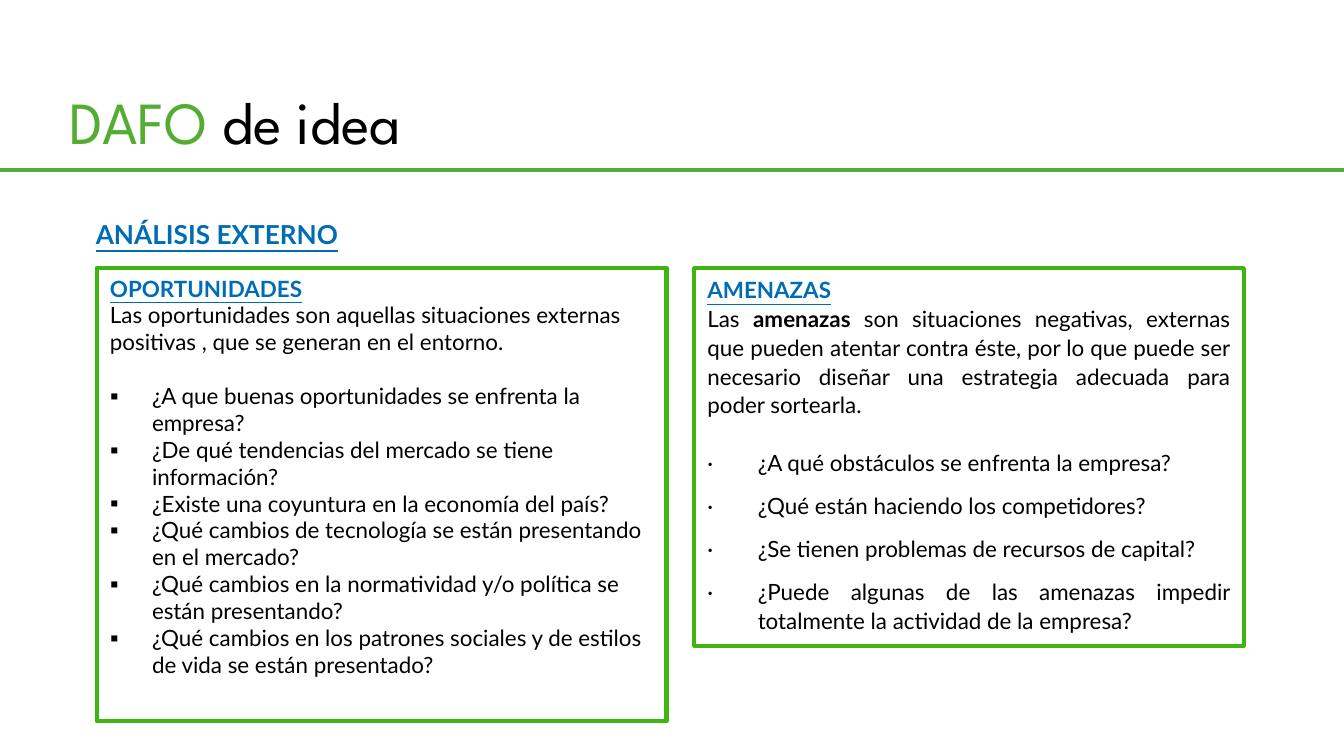
from lxml import etree
from pptx import Presentation
from pptx import util as u
from pptx.dml.color import RGBColor
from pptx.enum import shapes, text
from pptx.oxml import ns

GREEN, BORDER, BLUE, BLACK = "53AD32", "3FB512", "006CB5", "000000"
HEADING = {"name": "Lato", "size": u.Pt(12), "bold": True, "underline": True}
BODY = {"name": "Lato", "size": u.Pt(12)}
STRONG = BODY | {"bold": True}
LINE_HEIGHT = 14.4  # one 12 pt line, in points


def rgb(code):
    return RGBColor.from_string(code)


def write(paragraph, *runs):
    for words, color, style in runs:
        run = paragraph.add_run()
        run.text = words
        run.font.color.rgb = rgb(color)
        for key, value in style.items():
            setattr(run.font, key, value)


deck = Presentation()
deck.slide_width = u.Inches(10)
deck.slide_height = deck.slide_width * 9 // 16
slide = deck.slides.add_slide(deck.slide_layouts[6])
cell = deck.slide_width // 100  # square grid, 100 columns wide

# Title and section heading
title_style = {"name": "League Spartan", "size": u.Pt(32)}
labels = [
    ((4.2, 4.45, 48.6, 9.1), text.MSO_ANCHOR.MIDDLE,
     [("DAFO ", GREEN, title_style), ("de idea", BLACK, title_style)]),
    ((6.15, 15.75, 35.7, 3.4), text.MSO_ANCHOR.TOP,
     [("ANÁLISIS EXTERNO", BLUE, HEADING | {"size": u.Pt(14)})]),
]
for place, anchor, runs in labels:
    label = slide.shapes.add_textbox(*(round(n * cell) for n in place)).text_frame
    label.word_wrap, label.vertical_anchor = True, anchor
    write(label.paragraphs[0], *runs)

# Rule under the title, edge to edge
rule_y = round(12.65 * cell)
rule = slide.shapes.add_connector(
    shapes.MSO_CONNECTOR.STRAIGHT, 0, rule_y, deck.slide_width, rule_y)
rule.line.color.rgb, rule.line.width = rgb(GREEN), u.Pt(2)
etree.SubElement(rule.element.spPr, ns.qn("a:effectLst"))

# Opportunities and threats
panels = [
    {
        "place": (7.2, 19.95, 42.4, 33.7), "bullet": "▪", "indent": 3.13, "gap": 0,
        "layout": {"alignment": text.PP_ALIGN.LEFT, "line_spacing": 1.0},
        "heading": "OPORTUNIDADES",
        "intro": [("Las oportunidades son aquellas situaciones externas "
                   "positivas , que se generan en el entorno.", BLACK, BODY)],
        "questions": [
            "¿A que buenas oportunidades se enfrenta la empresa?",
            "¿De qué tendencias del mercado se tiene información?",
            "¿Existe una coyuntura en la economía del país?",
            "¿Qué cambios de tecnología se están presentando en el mercado?",
            "¿Qué cambios en la normatividad y/o política se están presentando?",
            "¿Qué cambios en los patrones sociales y de estilos de vida "
            "se están presentado?",
        ],
    },
    {
        "place": (51.65, 19.95, 40.9, 28.1), "bullet": "∙", "indent": 3.75, "gap": 7.7,
        "layout": {"alignment": text.PP_ALIGN.JUSTIFY, "line_spacing": 1.07},
        "heading": "AMENAZAS",
        "intro": [("Las ", BLACK, BODY), ("amenazas ", BLACK, STRONG),
                  ("son situaciones negativas, externas que pueden atentar contra "
                   "éste, por lo que puede ser necesario diseñar una estrategia "
                   "adecuada para poder sortearla. ", BLACK, BODY)],
        "questions": [
            "¿A qué obstáculos se enfrenta la empresa? ",
            "¿Qué están haciendo los competidores? ",
            "¿Se tienen problemas de recursos de capital? ",
            "¿Puede algunas de las amenazas impedir totalmente la actividad "
            "de la empresa? ",
        ],
    },
]
for panel in panels:
    box = slide.shapes.add_shape(
        shapes.MSO_SHAPE.RECTANGLE, *(round(n * cell) for n in panel["place"]))
    box.shadow.inherit = False
    box.fill.background()
    box.line.color.rgb, box.line.width = rgb(BORDER), u.Pt(2.25)
    frame = box.text_frame
    frame.word_wrap, frame.vertical_anchor = True, text.MSO_ANCHOR.TOP

    write(frame.paragraphs[0], (panel["heading"], BLUE, HEADING))
    write(frame.add_paragraph(), *panel["intro"])

    # Questions, set one line below the intro
    for order, words in enumerate(panel["questions"]):
        question = frame.add_paragraph()
        props = question._p.get_or_add_pPr()
        indent = round(panel["indent"] * cell)
        props.set("marL", str(indent))
        props.set("indent", str(-indent))
        bullet_color = etree.SubElement(props, ns.qn("a:buClr"))
        etree.SubElement(bullet_color, ns.qn("a:srgbClr"), val=BLACK)
        etree.SubElement(props, ns.qn("a:buFont"), typeface="Lato")
        etree.SubElement(props, ns.qn("a:buChar"), char=panel["bullet"])
        blank_line = LINE_HEIGHT * panel["layout"]["line_spacing"]
        question.space_before = u.Pt(panel["gap"] if order else blank_line)
        write(question, (words, BLACK, BODY))

    for paragraph in frame.paragraphs:
        for key, value in panel["layout"].items():
            setattr(paragraph, key, value)

deck.save("out.pptx")
